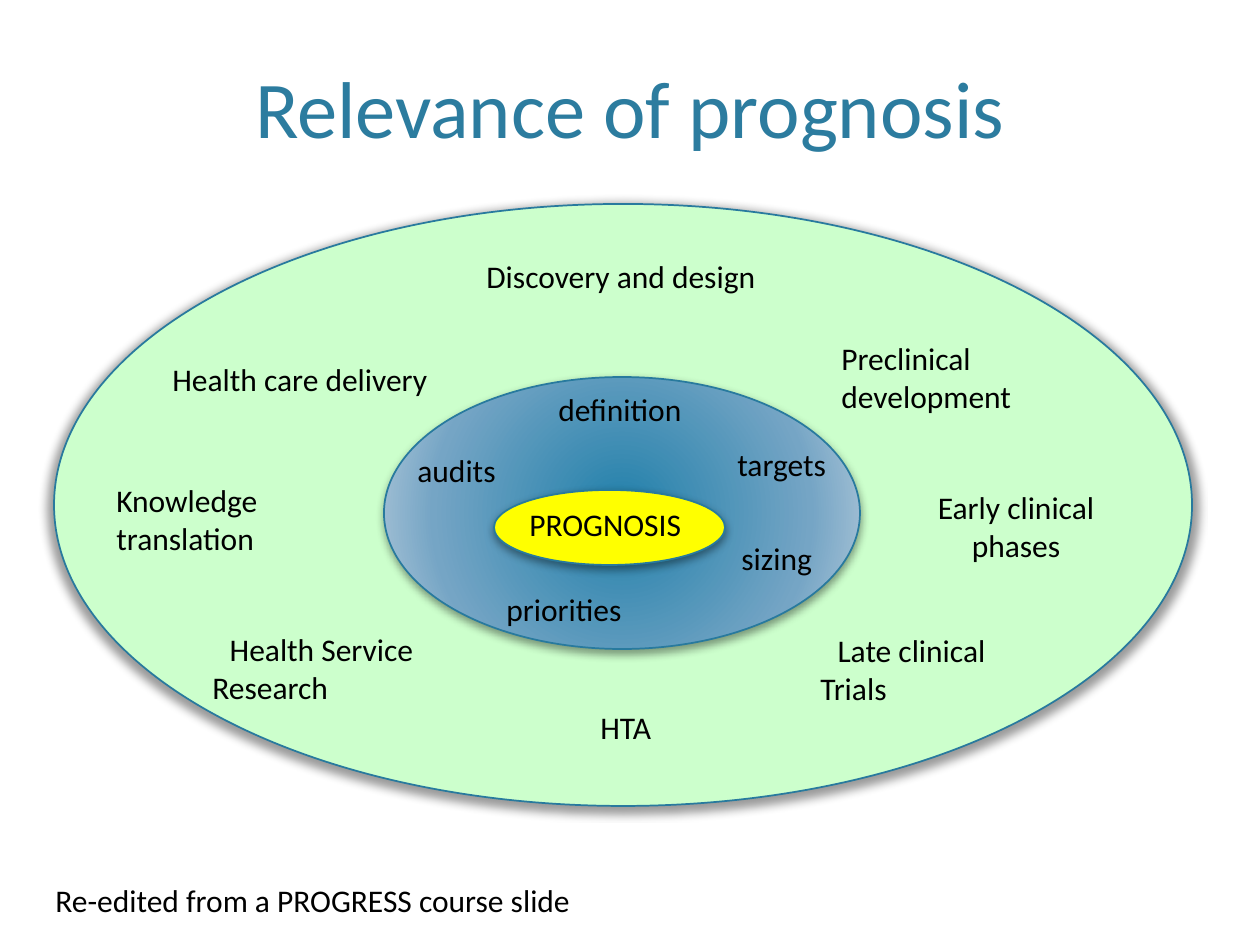
"""Build the slide on the relevance of prognosis."""
from lxml import etree
from pptx import Presentation
from pptx.dml.color import RGBColor
from pptx.enum.shapes import MSO_SHAPE
from pptx.enum.text import MSO_ANCHOR, MSO_AUTO_SIZE, PP_ALIGN
from pptx.oxml import parse_xml
from pptx.oxml.ns import nsdecls, qn
from pptx.util import Emu, Pt

OVAL = MSO_SHAPE.OVAL
LEFT, MID = PP_ALIGN.LEFT, PP_ALIGN.CENTER
BOTTOM = MSO_ANCHOR.BOTTOM
GROW = MSO_AUTO_SIZE.SHAPE_TO_FIT_TEXT
SCALE = 914400 / 126
EDGE = "287A9E"


def px(*sizes):
    return [Emu(round(size * SCALE)) for size in sizes]


def color(code):
    return RGBColor.from_string(code)


deck = Presentation()
deck.slide_width, deck.slide_height = px(1260, 945)
slide = deck.slides.add_slide(deck.slide_layouts[5])
shapes = slide.shapes

title = shapes.title
title.left, title.top, title.width, title.height = px(75, 15, 1109, 146)
title.text_frame.text = "Relevance of prognosis"
title.text_frame.vertical_anchor = BOTTOM
head = title.text_frame.paragraphs[0]
head.alignment = MID
look = {"name": "Calibri", "size": Pt(46), "bold": False}
for key, value in look.items():
    setattr(head.font, key, value)
head.font.color.rgb = color("2C7C9F")

stops = [(0, "2180AA"), (69, "75A5C5"), (100, "B8CCDC")]
marks = "".join(
    f'<a:gs pos="{spot * 1000}"><a:srgbClr val="{code}"/></a:gs>'
    for spot, code in stops
)
blend = (
    f'<a:gradFill {nsdecls("a")} rotWithShape="1"><a:gsLst>{marks}</a:gsLst>'
    '<a:path path="circle"><a:fillToRect l="100000" t="100000" '
    'r="100000" b="100000"/></a:path></a:gradFill>'
)

rings = [
    ((54, 204, 1138, 602), "CCFFCC", "101000"),
    ((384, 377, 476, 272), None, "100000"),
    ((494, 490, 231, 75), "FFFF00", "100000"),
]
for place, fill, zoom in rings:
    ring = shapes.add_shape(OVAL, *px(*place))
    ring.line.color.rgb = color(EDGE)
    ring.line.width = Pt(1)
    if fill:
        ring.fill.solid()
        ring.fill.fore_color.rgb = color(fill)
    else:
        ring.fill.background()
        props = ring.element.spPr
        props.replace(props.find(qn("a:noFill")), parse_xml(blend))
    ring.shadow.inherit = False
    glow = etree.SubElement(
        ring.element.spPr.find(qn("a:effectLst")), qn("a:outerShdw"),
        blurRad=str(Pt(5)), dist=str(Pt(2)), dir="5400000",
        sx=zoom, sy=zoom, algn="ctr", rotWithShape="0",
    )
    tint = etree.SubElement(glow, qn("a:srgbClr"), val="000000")
    etree.SubElement(tint, qn("a:alpha"), val="40000")

labels = [
    ((474, 251, 297, 50), [("Discovery and design", LEFT)]),
    ((829, 333, 218, 89), [("Preclinical", LEFT), ("development", LEFT)]),
    ((907, 482, 218, 89), [("Early clinical", MID), ("phases", MID)]),
    ((808, 625, 207, 89), [("Late clinical", MID), ("Trials", LEFT)]),
    ((588, 702, 79, 50), [("HTA", LEFT)]),
    ((200, 624, 243, 89), [("Health Service", MID), ("Research", LEFT)]),
    ((104, 475, 188, 89), [("Knowledge", LEFT), ("translation", LEFT)]),
    ((160, 354, 284, 50), [("Health care delivery", LEFT)]),
    ((517, 499, 179, 50), [("PROGNOSIS", LEFT)]),
    ((546, 384, 150, 50), [("definition", LEFT)]),
    ((729, 533, 97, 50), [("sizing", LEFT)]),
    ((725, 439, 116, 50), [("targets", LEFT)]),
    ((494, 584, 142, 50), [("priorities", LEFT)]),
    ((405, 445, 105, 50), [("audits", LEFT)]),
    ((43, 875, 648, 50), [("Re-edited from a PROGRESS course slide", LEFT)]),
]
look = {"name": "Calibri", "size": Pt(18)}
for place, lines in labels:
    frame = shapes.add_textbox(*px(*place)).text_frame
    frame.word_wrap = False
    frame.auto_size = GROW
    frame.text = "\n".join(text for text, align in lines)
    for para, (text, align) in zip(frame.paragraphs, lines):
        para.alignment = align
        for key, value in look.items():
            setattr(para.font, key, value)
        para.font.color.rgb = color("000000")

deck.save("out.pptx")
